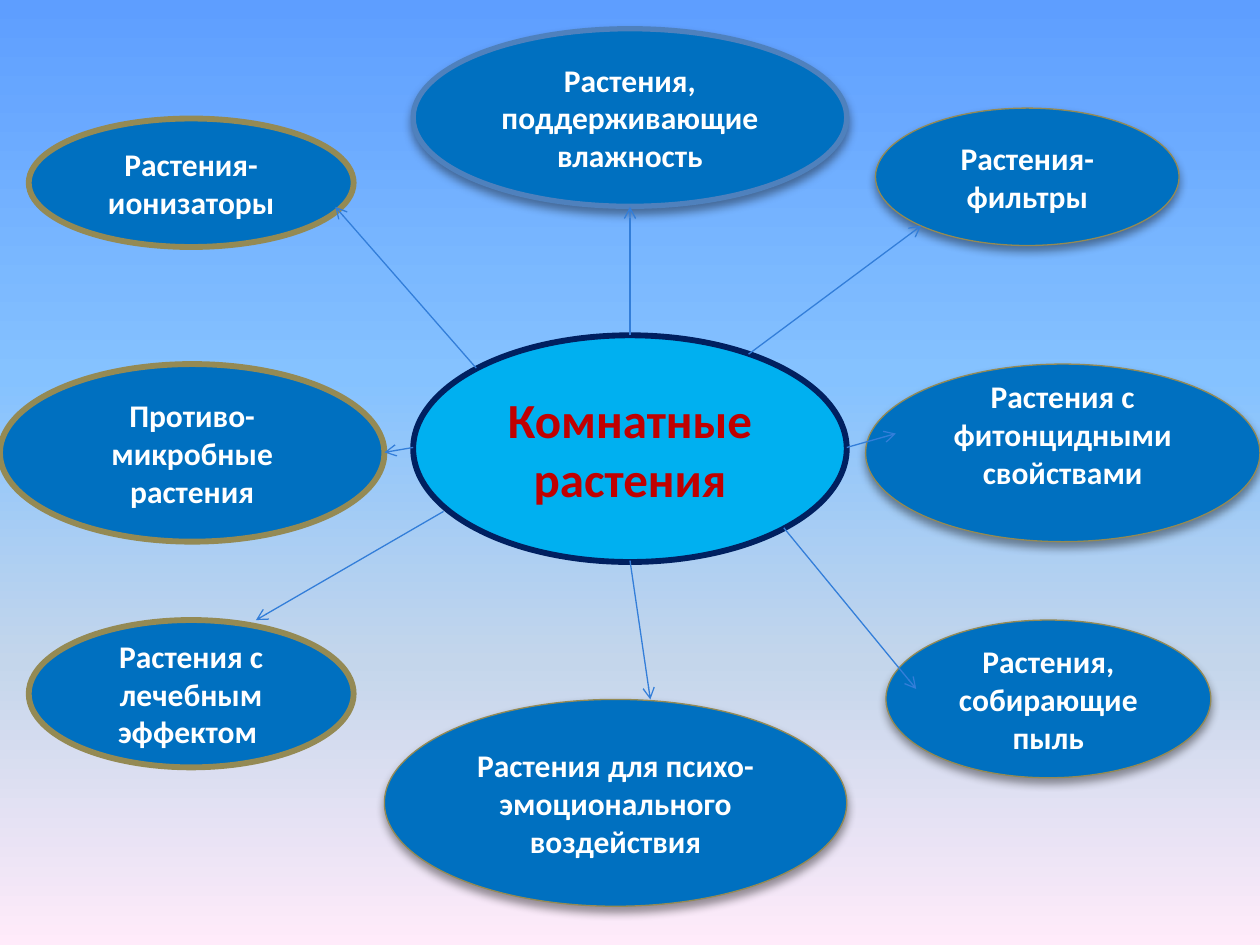
from dataclasses import dataclass

from lxml import etree
from pptx import Presentation
from pptx.dml.color import RGBColor
from pptx.enum.shapes import MSO_CONNECTOR, MSO_SHAPE
from pptx.enum.text import MSO_ANCHOR, PP_ALIGN
from pptx.oxml.ns import qn
from pptx.util import Cm, Pt

ELLIPSE = MSO_SHAPE.OVAL
STRAIGHT = MSO_CONNECTOR.STRAIGHT
MIDDLE = MSO_ANCHOR.MIDDLE
CENTER = PP_ALIGN.CENTER

FONT = "Calibri"
COLORS = {
    "hub": "00B0F0",
    "hub line": "002060",
    "hub text": "C00000",
    "group": "0070C0",
    "olive": "948A54",
    "blue": "4F81BD",
    "white": "FFFFFF",
    "arrow": "337ED9",
    "shadow": "000000",
}
SKY_STOPS = [(0, "5E9EFF"), (40, "85C2FF"), (70, "C4D6EB"), (100, "FFEBFA")]
BLANK_LAYOUT = 6
THICK, THIN = 3.35, 0.75


@dataclass
class Bubble:
    """An ellipse with text; lengths in centimetres, line in points."""
    text: str
    left: float
    top: float
    width: float
    height: float
    line_width: float = THICK
    line: str = "olive"
    fill: str = "group"
    font_color: str = "white"
    font_size: int = 18
    shadow: bool = False
    bottom_inset: float = 0.13


@dataclass
class Arrow:
    """A straight arrow; lengths in centimetres."""
    start: tuple[float, float]
    end: tuple[float, float]


BUBBLES = [
    Bubble("Комнатные растения", 8.33, 6.76, 8.74, 4.57, line="hub line",
           fill="hub", font_color="hub text", font_size=28),
    Bubble("Растения-фильтры", 17.65, 2.18, 6.12, 2.77, THIN, shadow=True),
    Bubble("Растения,\nсобирающие пыль", 17.86, 12.5, 6.55, 3.18, THIN, shadow=True),
    Bubble("Растения-ионизаторы", 0.58, 2.39, 6.55, 2.59),
    Bubble("Растения для психо-эмоционального воздействия",
           7.75, 14.1, 9.32, 4.17, THIN, shadow=True),
    Bubble("Растения с фитонцидными свойствами",
           17.45, 7.34, 7.95, 3.58, THIN, shadow=True, bottom_inset=0.89),
    Bubble("Растения,\nподдерживающие влажность",
           8.33, 0.58, 8.74, 3.58, 3, line="blue", shadow=True),
    Bubble("Растения с лечебным эффектом ", 0.58, 12.5, 6.55, 2.97),
    Bubble("Противо-\nмикробные растения", 0, 7.34, 7.75, 3.58),
]

ARROWS = [
    Arrow((12.7, 6.76), (12.7, 4.17)),
    Arrow((15.09, 7.14), (18.57, 4.55)),
    Arrow((17.07, 9.02), (18.06, 8.74)),
    Arrow((15.8, 10.64), (18.47, 13.89)),
    Arrow((12.7, 11.3), (13.11, 14.1)),
    Arrow((8.94, 10.31), (5.16, 12.5)),
    Arrow((8.33, 9.02), (7.75, 9.12)),
    Arrow((9.6, 7.42), (6.76, 4.17)),
]


def color(name: str) -> RGBColor:
    return RGBColor.from_string(COLORS[name])


def add_child(parent, tag: str, **attributes):
    return etree.SubElement(parent, qn(tag), attributes)


def paint_background(slide) -> None:
    fill = slide.background.fill
    fill.gradient()
    fill.gradient_angle = 270
    stop_list = next(slide.element.iter(qn("a:gsLst")))
    for stop in list(stop_list):
        stop_list.remove(stop)
    for percent, value in SKY_STOPS:
        stop = add_child(stop_list, "a:gs", pos=str(percent * 1000))
        add_child(stop, "a:srgbClr", val=value)


def add_shadow(shape) -> None:
    effects = shape.element.spPr.find(qn("a:effectLst"))
    shadow = add_child(effects, "a:outerShdw", blurRad=str(Pt(5.2)),
                       dist=str(Pt(3)), dir="5400000", rotWithShape="0")
    shade = add_child(shadow, "a:srgbClr", val=COLORS["shadow"])
    add_child(shade, "a:alpha", val="40000")


def add_bubble(slide, bubble: Bubble) -> None:
    shape = slide.shapes.add_shape(ELLIPSE, Cm(bubble.left), Cm(bubble.top),
                                   Cm(bubble.width), Cm(bubble.height))
    shape.fill.solid()
    shape.fill.fore_color.rgb = color(bubble.fill)
    shape.line.color.rgb = color(bubble.line)
    shape.line.width = Pt(bubble.line_width)
    shape.shadow.inherit = False
    if bubble.shadow:
        add_shadow(shape)

    frame = shape.text_frame
    frame.word_wrap = True
    frame.vertical_anchor = MIDDLE
    frame.margin_bottom = Cm(bubble.bottom_inset)
    frame.text = bubble.text
    for para in frame.paragraphs:
        para.alignment = CENTER
        for span in para.runs:
            span.font.name = FONT
            span.font.size = Pt(bubble.font_size)
            span.font.bold = True
            span.font.color.rgb = color(bubble.font_color)


def add_arrow(slide, arrow: Arrow) -> None:
    points = [Cm(value) for value in (*arrow.start, *arrow.end)]
    connector = slide.shapes.add_connector(STRAIGHT, *points)
    connector.line.color.rgb = color("arrow")
    connector.line.width = Pt(THIN)
    add_child(connector.line._get_or_add_ln(), "a:tailEnd", type="arrow")
    add_child(connector.element.spPr, "a:effectLst")


def main() -> None:
    deck = Presentation()
    deck.slide_width, deck.slide_height = Cm(25.4), Cm(19.05)
    page = deck.slides.add_slide(deck.slide_layouts[BLANK_LAYOUT])
    paint_background(page)

    # Central topic and the plant groups around it
    for bubble in BUBBLES:
        add_bubble(page, bubble)

    # Arrows from the topic to each group
    for arrow in ARROWS:
        add_arrow(page, arrow)

    deck.save("out.pptx")


if __name__ == "__main__":
    main()
